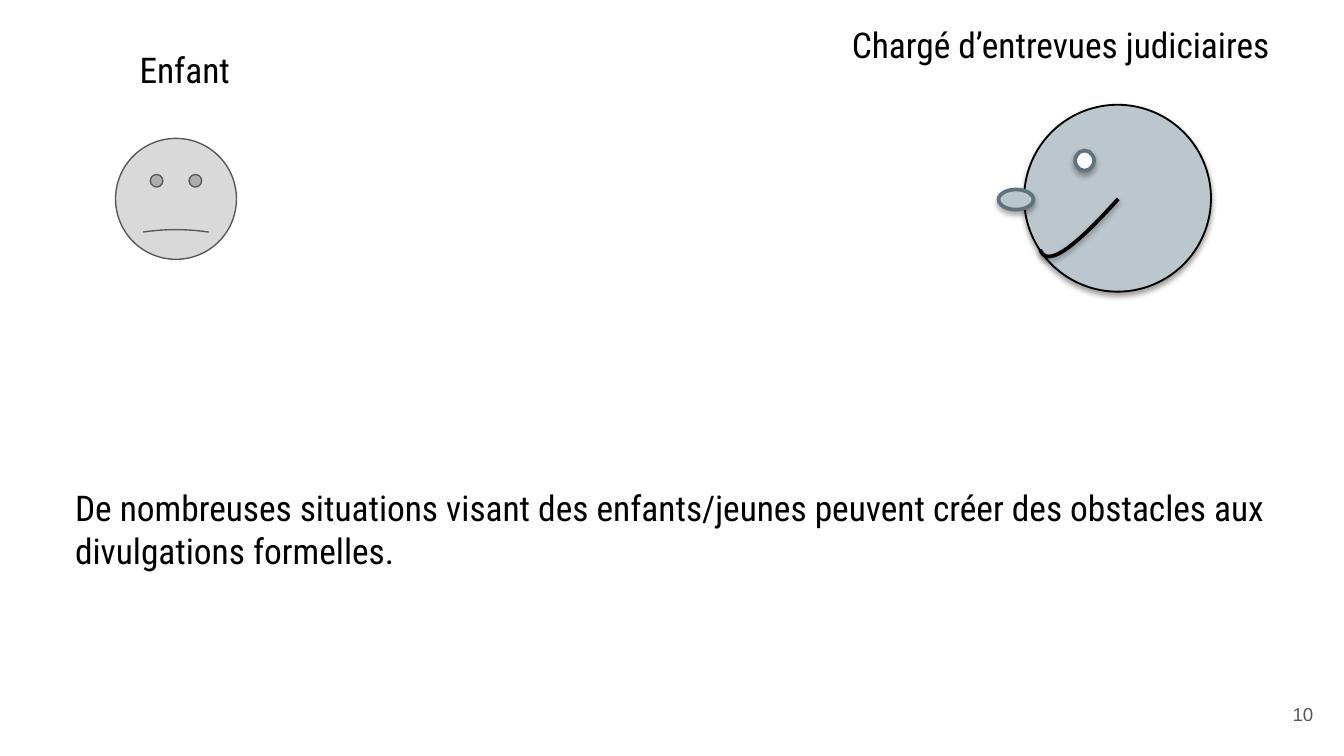
"""Build the slide showing a child facing a forensic interviewer."""
from dataclasses import dataclass
from typing import Optional

from lxml.etree import SubElement
from pptx import Presentation
from pptx.dml.color import RGBColor
from pptx.enum.shapes import MSO_SHAPE as Shape
from pptx.enum.text import MSO_ANCHOR as Anchor, PP_ALIGN as Align
from pptx.oxml.ns import qn
from pptx.util import Inches, Pt

BLACK = RGBColor(0x00, 0x00, 0x00)
WHITE = RGBColor(0xFF, 0xFF, 0xFF)
GREY = RGBColor(0x58, 0x58, 0x58)
LIGHT_GREY = RGBColor(0xD9, 0xD9, 0xD9)
BLUE_GREY = RGBColor(0xBB, 0xC7, 0xCD)
SLATE = RGBColor(0x60, 0x73, 0x7D)
MOUTH_CURVE = ((8.32, 1.48), (7.98, 1.86), (7.79, 1.99), (7.74, 1.86))
MOUTH_STEPS = 24


@dataclass(frozen=True)
class Shadow:
    opacity: int
    distance: float


SOFT = Shadow(38, 1.6)
SMALL = Shadow(35, 1.8)


@dataclass(frozen=True)
class Label:
    text: str
    left: float
    top: float
    width: float
    height: float = 0.52
    font: str = "Roboto Condensed"
    size: int = 19
    color: RGBColor = BLACK
    align: Align = Align.LEFT
    anchor: Anchor = Anchor.TOP


@dataclass(frozen=True)
class Feature:
    kind: Shape
    left: float
    top: float
    width: float
    height: float
    fill: RGBColor
    line: RGBColor
    weight: float
    shadow: Optional[Shadow] = None


LABELS = (
    Label("Chargé d’entrevues judiciaires", 6.24, 0.07, 3.6),
    Label("Enfant", 0.94, 0.26, 2),
    Label("De nombreuses situations visant des enfants/jeunes peuvent créer "
          "des obstacles aux divulgations formelles.", 0.46, 3.52, 9.75, 0.83),
    Label("10", 9.4, 5.14, 0.47, 0.35, "Arial", 10, GREY, Align.RIGHT, Anchor.MIDDLE),
)
CHILD = Feature(Shape.SMILEY_FACE, 0.86, 1.03, 0.9, 0.9, LIGHT_GREY, GREY, 0.75)
HEAD = Feature(Shape.OVAL, 7.62, 0.78, 1.39, 1.39, BLUE_GREY, BLACK, 1, SOFT)
EYE = Feature(Shape.OVAL, 8, 1.12, 0.14, 0.15, WHITE, SLATE, 2, SMALL)
NOSE = Feature(Shape.OVAL, 7.43, 1.41, 0.26, 0.15, BLUE_GREY, SLATE, 2, SMALL)


def set_line(sp, color: RGBColor, weight: float, shadow: Optional[Shadow]) -> None:
    """Set the outline and replace the theme shadow."""
    sp.line.color.rgb = color
    sp.line.width = Pt(weight)
    sp.shadow.inherit = False
    if shadow:
        effects = sp._element.spPr.find(qn("a:effectLst"))
        outer = SubElement(effects, qn("a:outerShdw"), blurRad=str(Pt(3)),
                           dist=str(Pt(shadow.distance)), dir="5400000", rotWithShape="0")
        color_el = SubElement(outer, qn("a:srgbClr"), val=str(BLACK))
        SubElement(color_el, qn("a:alpha"), val=str(shadow.opacity * 1000))


def add_feature(s, f: Feature):
    """Draw one filled part of a face."""
    sp = s.shapes.add_shape(f.kind, Inches(f.left), Inches(f.top),
                            Inches(f.width), Inches(f.height))
    sp.fill.solid()
    sp.fill.fore_color.rgb = f.fill
    set_line(sp, f.line, f.weight, f.shadow)
    return sp


def add_mouth(s) -> None:
    """Draw the interviewer's mouth along a cubic curve."""
    def point(t: float) -> tuple[int, int]:
        """Return the curve point at t."""
        weights = ((1 - t) ** 3, 3 * t * (1 - t) ** 2, 3 * t * t * (1 - t), t ** 3)
        x, y = (sum(w * p[axis] for w, p in zip(weights, MOUTH_CURVE)) for axis in (0, 1))
        return Inches(x), Inches(y)

    points = [point(i / MOUTH_STEPS) for i in range(MOUTH_STEPS + 1)]
    builder = s.shapes.build_freeform(*points[0])
    builder.add_line_segments(points[1:], close=False)
    sp = builder.convert_to_shape()
    sp.fill.background()
    set_line(sp, BLACK, 2, SOFT)


def add_label(s, label: Label) -> None:
    """Add one text box."""
    sp = s.shapes.add_textbox(Inches(label.left), Inches(label.top),
                              Inches(label.width), Inches(label.height))
    tf = sp.text_frame
    tf.word_wrap = True
    tf.vertical_anchor = label.anchor
    tf.margin_left = tf.margin_right = tf.margin_top = tf.margin_bottom = Inches(0.1)
    p = tf.paragraphs[0]
    p.text = label.text
    p.alignment = label.align
    p.font.name = label.font
    p.font.size = Pt(label.size)
    p.font.color.rgb = label.color


def main() -> None:
    """Build and save the slide."""
    prs = Presentation()
    prs.slide_width = Inches(10)
    prs.slide_height = prs.slide_width * 9 // 16
    s = prs.slides.add_slide(prs.slide_layouts[6])
    for label in LABELS:
        add_label(s, label)
    child = add_feature(s, CHILD)
    child.adjustments[0] = -0.01
    add_feature(s, HEAD)
    add_feature(s, EYE)
    add_mouth(s)
    add_feature(s, NOSE)
    prs.save("out.pptx")


if __name__ == "__main__":
    main()
